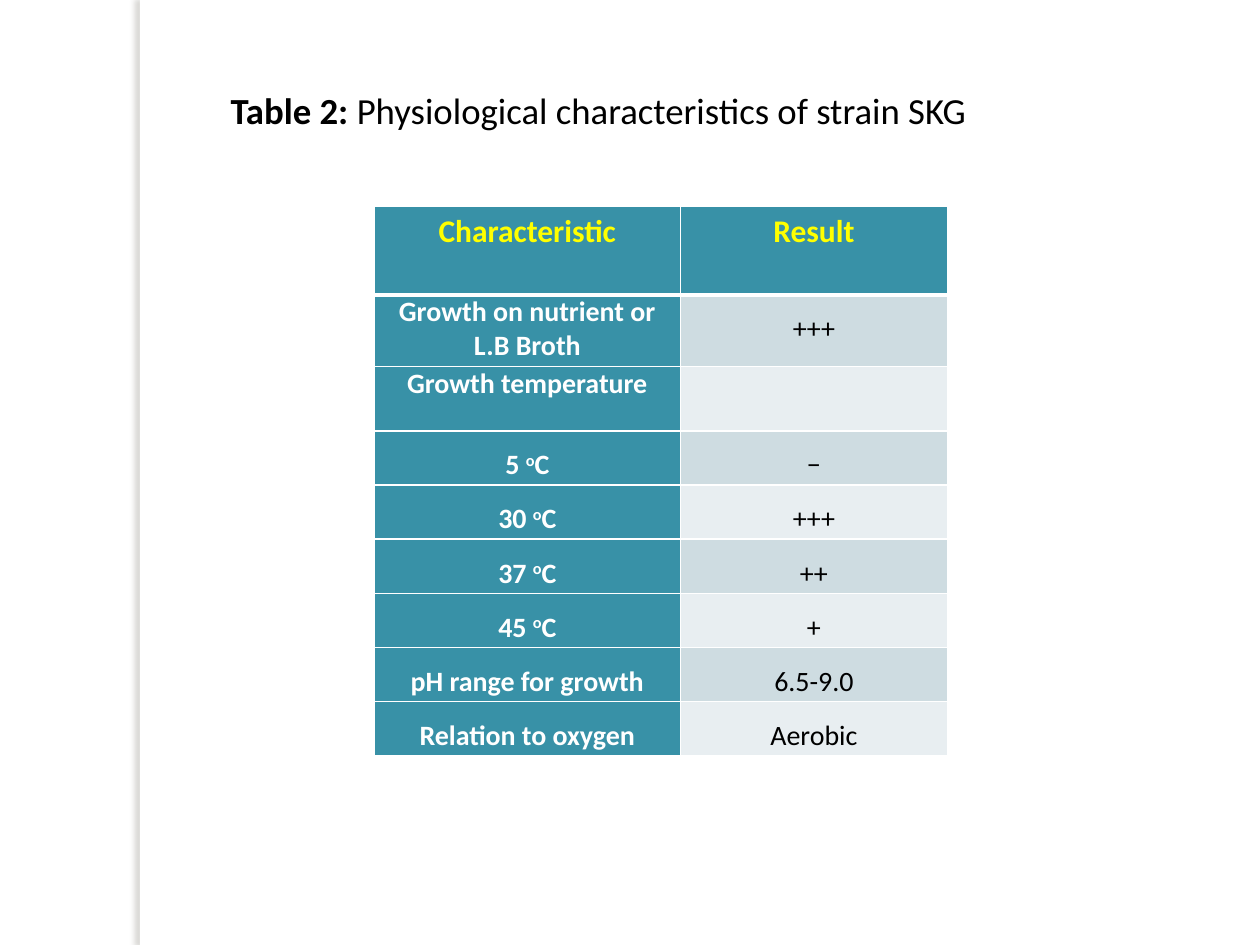
from dataclasses import dataclass

from lxml import etree
from pptx import Presentation
from pptx import util as u
from pptx.dml.color import RGBColor
from pptx.enum import shapes, text
from pptx.oxml import parse_xml
from pptx.oxml.ns import nsdecls, qn


@dataclass(frozen=True)
class Theme:
    font: str = "Calibri"
    title_size: int = 21
    header_size: int = 18
    body_size: int = 16
    white: str = "FFFFFF"
    black: str = "000000"
    header_text: str = "FFFF00"
    teal: str = "3891A7"
    bands: tuple[str, str] = ("CEDCE1", "E8EEF1")
    shadow: str = "736F63"


@dataclass(frozen=True)
class Row:
    characteristic: str
    result: str
    height: float = 0.43
    label_spacing: float = 1.5
    degrees: bool = False


THEME = Theme()
COLUMN_WIDTHS = (2.43, 2.12)
HEADER = Row("Characteristic", "Result", 0.7, 1.15)
ROWS = (
    Row("Growth on nutrient or L.B Broth", "+++", 0.57, 1.0),
    Row("Growth temperature", "", 0.51, 1.0),
    Row("5 ", "−", degrees=True),
    Row("30 ", "+++", degrees=True),
    Row("37 ", "++", degrees=True),
    Row("45 ", "+", degrees=True),
    Row("pH range for growth", "6.5-9.0"),
    Row("Relation to oxygen", "Aerobic"),
)


def set_font(paragraph, size: int, color: str, bold: bool = False) -> None:
    font = paragraph.font
    font.name = THEME.font
    font.size = u.Pt(size)
    font.bold = bold
    font.color.rgb = RGBColor.from_string(color)


def set_borders(cell, bottom: float = 1, top: float = 1) -> None:
    properties = cell._tc.get_or_add_tcPr()
    widths = {"lnL": 1, "lnR": 1, "lnT": top, "lnB": bottom}
    for position, (side, points) in enumerate(widths.items()):
        properties.insert(position, parse_xml(
            f'<a:{side} {nsdecls("a")} w="{u.Pt(points)}"><a:solidFill>'
            f'<a:srgbClr val="{THEME.white}"/></a:solidFill></a:{side}>'))


def fill_cell(cell, content: str, fill: str, color: str, size: int,
              bold: bool, spacing: float, degrees: bool = False) -> None:
    cell.margin_left = cell.margin_right = u.Inches(0.07)
    cell.margin_top = cell.margin_bottom = 0
    cell.fill.solid()
    cell.fill.fore_color.rgb = RGBColor.from_string(fill)
    paragraph = cell.text_frame.paragraphs[0]
    paragraph.alignment = text.PP_ALIGN.CENTER
    paragraph.line_spacing = spacing
    set_font(paragraph, size, color, bold)
    if content:
        paragraph.add_run().text = content
    if degrees:
        degree = paragraph.add_run()
        degree.text = "ο"
        degree._r.get_or_add_rPr().set("baseline", "30000")
        paragraph.add_run().text = "C"


def add_side_strip(slide) -> None:
    strip = slide.shapes.add_shape(
        shapes.MSO_SHAPE.RECTANGLE,
        u.Inches(1.11), 0, u.Inches(0.08), u.Inches(7.5))
    strip.fill.solid()
    strip.fill.fore_color.rgb = RGBColor.from_string(THEME.white)
    strip.line.fill.background()
    strip.shadow.inherit = False
    effects = strip._element.spPr.find(qn("a:effectLst"))
    shadow = etree.SubElement(
        effects, qn("a:outerShdw"), blurRad=str(u.Pt(3)), dist=str(u.Pt(3)),
        dir="10800000", algn="tl", rotWithShape="0")
    color = etree.SubElement(shadow, qn("a:srgbClr"), val=THEME.shadow)
    etree.SubElement(color, qn("a:alpha"), val="25000")


def add_title(slide) -> None:
    title = slide.shapes.title
    title.left, title.top = u.Inches(1.73), u.Inches(0.65)
    title.width, title.height = u.Inches(7.72), u.Inches(0.45)
    frame = title.text_frame
    frame.word_wrap = True
    frame.auto_size = text.MSO_AUTO_SIZE.NONE
    frame.vertical_anchor = text.MSO_ANCHOR.TOP
    paragraph = frame.paragraphs[0]
    paragraph.alignment = text.PP_ALIGN.LEFT
    set_font(paragraph, THEME.title_size, THEME.black)
    label = paragraph.add_run()
    label.text = "Table 2: "
    label.font.bold = True
    paragraph.add_run().text = "Physiological characteristics of strain SKG"


def add_results_table(slide) -> None:
    rows = (HEADER, *ROWS)
    frame = slide.shapes.add_table(
        len(rows), len(COLUMN_WIDTHS), u.Inches(2.97), u.Inches(1.64),
        u.Inches(sum(COLUMN_WIDTHS)), u.Inches(sum(r.height for r in rows)))
    table = frame.table
    table.first_row = table.horz_banding = False
    for column, width in zip(table.columns, COLUMN_WIDTHS):
        column.width = u.Inches(width)

    for index, row in enumerate(rows):
        table.rows[index].height = u.Inches(row.height)
        label, result = table.cell(index, 0), table.cell(index, 1)
        if row is HEADER:
            for cell, content in ((label, row.characteristic), (result, row.result)):
                fill_cell(cell, content, THEME.teal, THEME.header_text,
                          THEME.header_size, True, row.label_spacing)
        else:
            fill_cell(label, row.characteristic, THEME.teal, THEME.white,
                      THEME.body_size, True, row.label_spacing, row.degrees)
            fill_cell(result, row.result, THEME.bands[(index - 1) % 2],
                      THEME.black, THEME.body_size, False, 1.5)
        for cell in (label, result):
            set_borders(cell, bottom=3 if index == 0 else 1,
                        top=3 if index == 1 else 1)


def main() -> None:
    presentation = Presentation()
    presentation.slide_width = u.Inches(10)
    presentation.slide_height = u.Inches(7.5)
    slide = presentation.slides.add_slide(presentation.slide_layouts[5])
    # Decorative edge, caption and data
    add_side_strip(slide)
    add_title(slide)
    add_results_table(slide)
    presentation.save("out.pptx")


if __name__ == "__main__":
    main()
